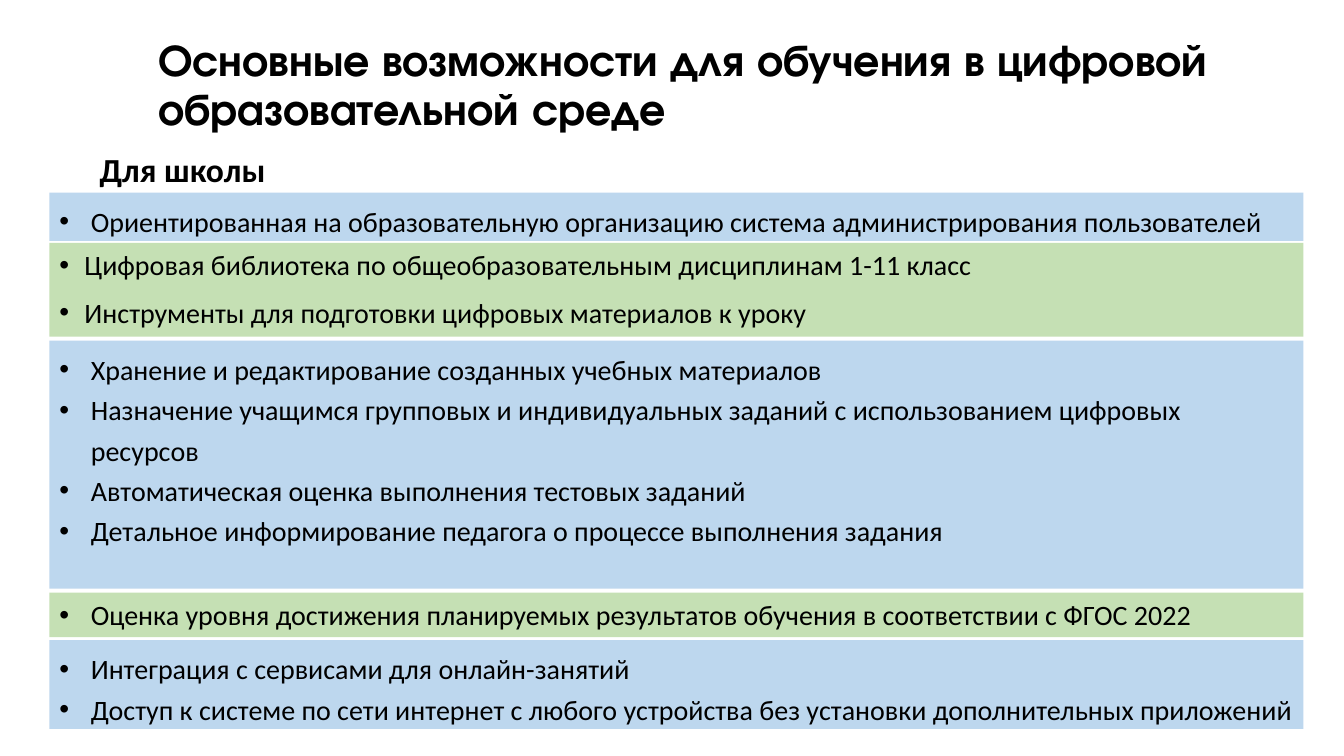
from lxml.etree import SubElement
from pptx import Presentation
from pptx.dml.color import RGBColor
from pptx.enum.shapes import MSO_SHAPE
from pptx.enum.text import MSO_ANCHOR, PP_ALIGN
from pptx.oxml.ns import qn
from pptx.util import Pt

BLACK = RGBColor(0x00, 0x00, 0x00)
BLUE = RGBColor(0xBD, 0xD7, 0xEE)
GREEN = RGBColor(0xC5, 0xE0, 0xB4)

LEFT, WIDTH = 35.3, 895.7

BANDS = [
    (137.5, 34.6, BLUE, 22.5, 1.2, 0, [
        "Ориентированная на образовательную организацию система администрирования пользователей",
    ]),
    (173.5, 67, GREEN, 18, 1, 10, [
        "Цифровая библиотека по общеобразовательным дисциплинам 1-11 класс",
        "Инструменты для подготовки цифровых материалов к уроку",
    ]),
    (243.4, 177.1, BLUE, 22.5, 1.2, 0, [
        "Хранение и редактирование созданных учебных материалов",
        "Назначение учащимся групповых и индивидуальных заданий с использованием цифровых ресурсов",
        "Автоматическая оценка выполнения тестовых заданий",
        "Детальное информирование педагога о процессе выполнения задания",
    ]),
    (423.4, 31.7, GREEN, 22.5, 1, 0, [
        "Оценка уровня достижения планируемых результатов обучения в соответствии с ФГОС 2022",
    ]),
    (457.2, 63.4, BLUE, 22.5, 1.2, 0, [
        "Интеграция с сервисами для онлайн-занятий",
        "Доступ к системе по сети интернет с любого устройства без установки дополнительных приложений",
    ]),
]


class Deck:
    face = "Calibri"
    size = 20

    def __init__(self, slide):
        self.slide = slide

    def style(self, para, face, size, bold=False):
        for run in para.runs:
            run.font.name = face
            run.font.size = Pt(size)
            run.font.bold = bold
            run.font.color.rgb = BLACK

    def head(self, text, left, top, width, height, face, size, anchor):
        box = self.slide.shapes.add_textbox(Pt(left), Pt(top), Pt(width), Pt(height))
        frame = box.text_frame
        frame.word_wrap = True
        frame.vertical_anchor = anchor
        frame.text = text
        para = frame.paragraphs[0]
        para.line_spacing = 0.9
        self.style(para, face, size, True)

    def bullet(self, para, indent):
        props = para._p.get_or_add_pPr()
        props.set("marL", str(Pt(indent)))
        props.set("indent", str(-Pt(indent)))
        SubElement(props, qn("a:buFont"), typeface="Arial")
        SubElement(props, qn("a:buChar"), char="•")

    def band(self, top, height, fill, indent, lead, gap, items):
        band = self.slide.shapes.add_shape(
            MSO_SHAPE.RECTANGLE, Pt(LEFT), Pt(top), Pt(WIDTH), Pt(height))
        band.shadow.inherit = False
        band.fill.solid()
        band.fill.fore_color.rgb = fill
        band.line.fill.background()
        frame = band.text_frame
        frame.word_wrap = True
        frame.vertical_anchor = MSO_ANCHOR.TOP
        frame.text = "\n".join(items)
        for index, para in enumerate(frame.paragraphs):
            self.bullet(para, indent)
            para.alignment = PP_ALIGN.LEFT
            para.line_spacing = lead
            if index and gap:
                para.space_before = Pt(gap)
            self.style(para, self.face, self.size)


def main():
    show = Presentation()
    show.slide_width, show.slide_height = Pt(960), Pt(540)
    deck = Deck(show.slides.add_slide(show.slide_layouts[6]))
    deck.head("Основные возможности для обучения в цифровой образовательной среде",
              105.8, 9.4, 788.4, 104.4, "TeX Gyre Adventor", 32, MSO_ANCHOR.MIDDLE)
    deck.head("Для школы", 64.1, 74.2, 406.1, 64.8, deck.face, 24, MSO_ANCHOR.BOTTOM)
    for band in BANDS:
        deck.band(*band)
    show.save("out.pptx")


if __name__ == "__main__":
    main()
